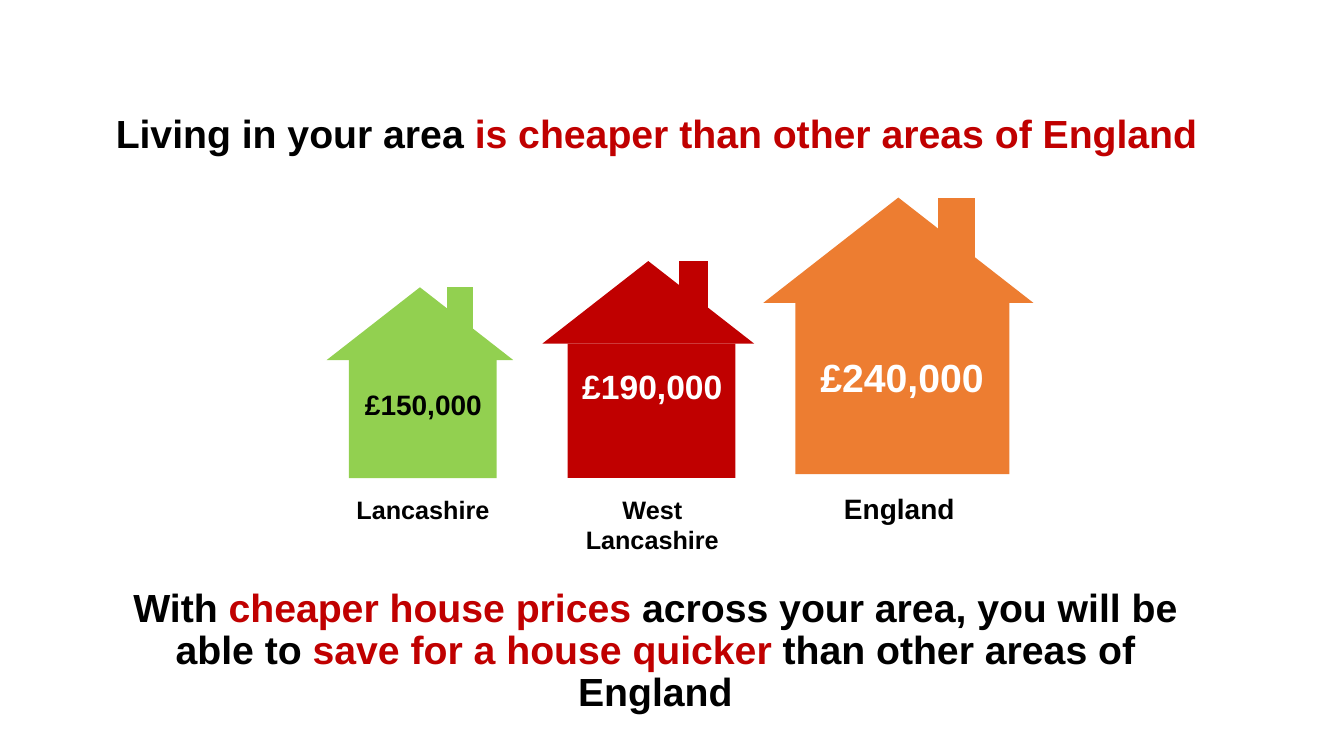
from pptx import Presentation
from pptx.dml.color import RGBColor
from pptx.enum.shapes import MSO_SHAPE
from pptx.enum.text import MSO_ANCHOR, PP_ALIGN
from pptx.util import Inches, Pt

RECT = MSO_SHAPE.RECTANGLE
LEFT, CENTER = PP_ALIGN.LEFT, PP_ALIGN.CENTER
TOP, MIDDLE = MSO_ANCHOR.TOP, MSO_ANCHOR.MIDDLE
BLACK, WHITE, RED = "000000", "FFFFFF", "C00000"
GREEN, ORANGE = "92D050", "ED7D31"

prs = Presentation()
prs.slide_width, prs.slide_height = Inches(13.33), Inches(7.5)
s = prs.slides.add_slide(prs.slide_layouts[6])
CELL = Inches(0.1)  # square grid cell


def color(target, hex_code):
    """Colour a font, or fill a shape and remove its outline and shadow."""
    if hasattr(target, "fill") and hasattr(target, "shadow"):
        target.fill.solid()
        target.fill.fore_color.rgb = RGBColor.from_string(hex_code)
        target.line.fill.background()
        target.shadow.inherit = False
    else:
        target.color.rgb = RGBColor.from_string(hex_code)


def add_text(box, runs, size, align=CENTER, anchor=TOP, spacing=1.0):
    """Place bold text in a box given in grid cells."""
    sp = s.shapes.add_textbox(*(int(v * CELL) for v in box))
    tf = sp.text_frame
    tf.word_wrap = True
    tf.vertical_anchor = anchor
    p = tf.paragraphs[0]
    p.alignment = align
    p.line_spacing = spacing
    for text, hex_code in runs:
        r = p.add_run()
        r.text = text
        r.font.name, r.font.size, r.font.bold = "Arial", Pt(size), True
        color(r.font, hex_code)


# Heading
add_text((10.5, 9.4, 115, 8.1),
         [("Living in your area ", BLACK),
          ("is cheaper than other areas of England", RED)],
         28, LEFT, MIDDLE, 0.9)

# Houses: left, top, width, fill, price (box, colour, size), area (box, size)
houses = [
    (32.4, 28.5, 18.5, GREEN,
     "£150,000", (33.5, 38, 17, 4.4), BLACK, 20,
     "Lancashire", (34.2, 48.6, 15.5, 4), 18),
    (53.8, 25.9, 21, RED,
     "£190,000", (56.2, 35.8, 17, 5), WHITE, 24,
     "West Lancashire", (55.4, 48.5, 18.6, 7.1), 18),
    (75.7, 19.6, 26.8, ORANGE,
     "£240,000", (79.9, 34.6, 19.1, 5.7), WHITE, 28,
     "England", (79.9, 48.3, 18.6, 4.4), 20),
]
# Outlines as hundredths of the house width
roof = [(50, 0), (0, 39), (100, 39)]
chimney = [(78.4, 25.7), (64.6, 25.7), (64.6, 0), (78.4, 0)]

for (left, top, width, fill, price, price_box, price_color, price_size,
     area, area_box, area_size) in houses:
    x, y, unit = left * CELL, top * CELL, width * CELL / 100
    house = s.shapes.add_group_shape().shapes
    body = house.add_shape(RECT, int(x + 11.9 * unit), int(y + 39 * unit),
                           int(79.2 * unit), int(63.4 * unit))
    color(body, fill)
    for outline in (roof, chimney):
        points = [(int(x + u * unit), int(y + v * unit)) for u, v in outline]
        fb = house.build_freeform(*points[0])
        fb.add_line_segments(points[1:], close=True)
        color(fb.convert_to_shape(), fill)
    add_text(price_box, [(price, price_color)], price_size)
    add_text(area_box, [(area, BLACK)], area_size)

# Closing message
add_text((11.2, 60.6, 107.6, 8.1),
         [("With ", BLACK), ("cheaper house prices ", RED),
          ("across your area, you will be able to ", BLACK),
          ("save for a house quicker", RED),
          (" than other areas of England", BLACK)],
         28, CENTER, MIDDLE, 0.9)

prs.save("out.pptx")
